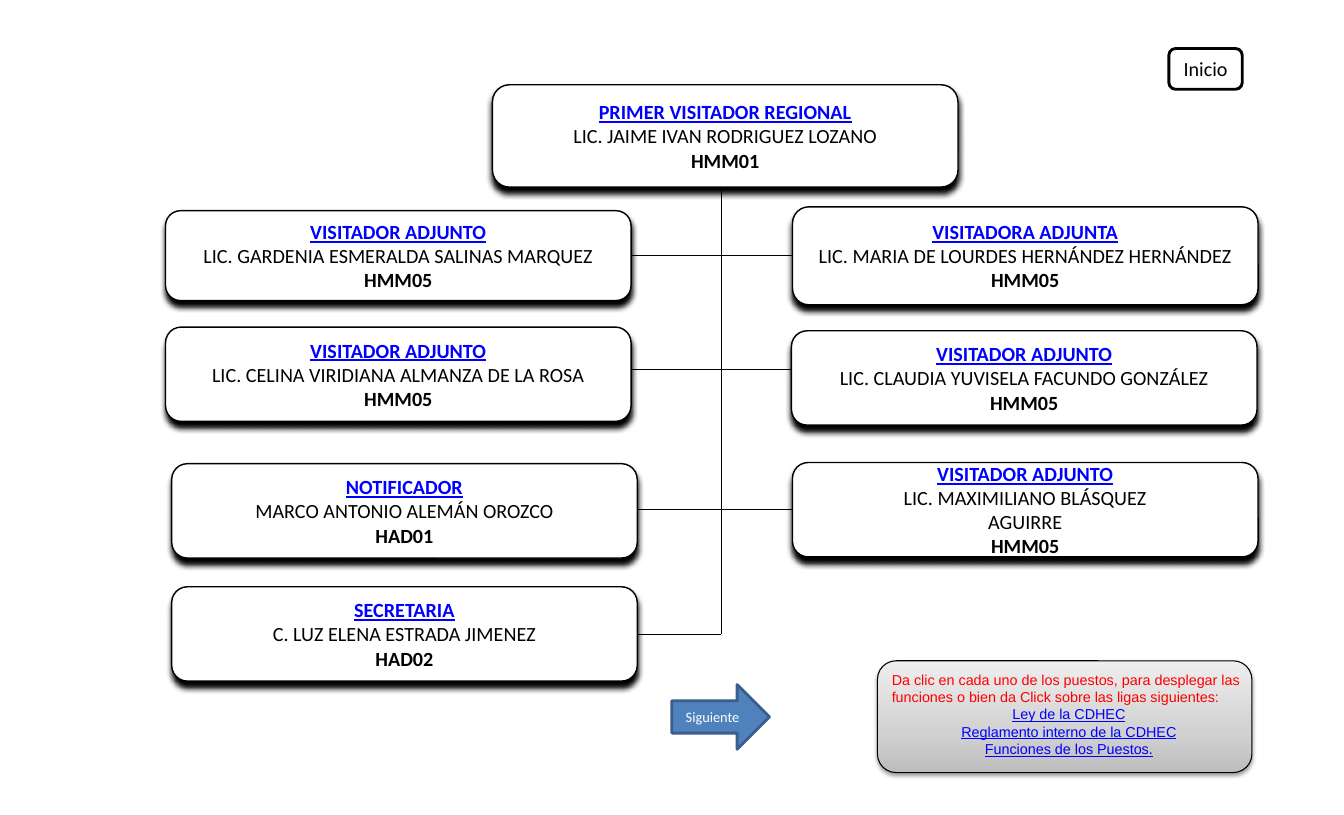
from copy import deepcopy
from lxml.etree import SubElement as Sub
from pptx import Presentation
from pptx.dml.color import RGBColor as Rgb
from pptx.enum.shapes import MSO_CONNECTOR as Conn, MSO_SHAPE as Kind
from pptx.enum.text import MSO_ANCHOR as Anchor, MSO_AUTO_SIZE as Fit, PP_ALIGN as Align
from pptx.oxml.ns import qn
from pptx.util import Pt

COLORS = {"ink": "000000", "paper": "FFFFFF", "link": "0000FF", "note": "FF0000",
          "arrow": "4F81BD", "rim": "3A5F8C",
          "low": "BDBDBD", "mid": "D1D1D1", "high": "EEEEEE"}
WIDE = 324
TRUNK = 501.8
HEAD = (342.7, 59, 71.3, ["PRIMER VISITADOR REGIONAL",
                          "LIC. JAIME IVAN RODRIGUEZ LOZANO", "HMM01"])
# Each row: height of its branch, then left and right posts (left, top, height, lines)
ROWS = [
    (177.8,
     (115.2, 146.7, 62.6, ["VISITADOR ADJUNTO",
                           "LIC. GARDENIA ESMERALDA SALINAS MARQUEZ", "HMM05"]),
     (551.5, 144, 68.2, ["VISITADORA ADJUNTA",
                         "LIC. MARIA DE LOURDES HERNÁNDEZ HERNÁNDEZ", "HMM05"])),
    (257,
     (115.2, 227.7, 65.7, ["VISITADOR ADJUNTO",
                           "LIC. CELINA VIRIDIANA ALMANZA DE LA ROSA", "HMM05"]),
     (550.8, 230.3, 65.7, ["VISITADOR ADJUNTO",
                           "LIC. CLAUDIA YUVISELA FACUNDO GONZÁLEZ", "HMM05"])),
    (355,
     (119.5, 322.8, 65.7, ["NOTIFICADOR", "MARCO ANTONIO ALEMÁN OROZCO", "HAD01"]),
     (551.5, 322, 65.7, ["VISITADOR ADJUNTO", "LIC. MAXIMILIANO BLÁSQUEZ",
                         "AGUIRRE", "HMM05"])),
    (441.4,
     (119.5, 408.5, 65.7, ["SECRETARIA", "C. LUZ ELENA ESTRADA JIMENEZ", "HAD02"]),
     None),
]


def tint(name):
    return Rgb.from_string(COLORS[name])


def add_shape(slide, kind, box, fill, rim, width):
    shape = slide.shapes.add_shape(kind, *map(Pt, box))
    shape.shadow.inherit = False
    shape.fill.solid()
    shape.fill.fore_color.rgb = tint(fill)
    shape.line.color.rgb = tint(rim)
    shape.line.width = Pt(width)
    return shape


def cast(shape, blur, drop, alpha):
    """Give the shape a black shadow straight below it."""
    effects = shape._element.spPr.find(qn("a:effectLst"))
    shade = Sub(effects, qn("a:outerShdw"), blurRad=str(Pt(blur)), dist=str(Pt(drop)),
                dir="5400000", algn="ctr", rotWithShape="0")
    color = Sub(shade, qn("a:srgbClr"), val=COLORS["ink"])
    Sub(color, qn("a:alpha"), val=str(alpha * 1000))


def write(frame, lines, face, size, align=Align.CENTER):
    """Fill the frame with (text, color, bold, underline) lines."""
    for i, (text, color, bold, under) in enumerate(lines):
        para = frame.paragraphs[0] if i == 0 else frame.add_paragraph()
        para.text = text
        para.alignment = align
        font = para.font
        font.name, font.size = face, Pt(size)
        font.color.rgb = tint(color)
        font.bold, font.underline = bold, under


def add_line(slide, x1, y1, x2, y2):
    line = slide.shapes.add_connector(Conn.STRAIGHT, *map(Pt, (x1, y1, x2, y2)))
    line.line.color.rgb = tint("ink")
    line.line.width = Pt(0.75)
    Sub(line._element.spPr, qn("a:effectLst"))


def add_post(slide, left, top, high, lines):
    post = add_shape(slide, Kind.ROUNDED_RECTANGLE, (left, top, WIDE, high),
                     "paper", "ink", 1)
    cast(post, 4, 4, 100)
    frame = post.text_frame
    frame.word_wrap = False
    frame.vertical_anchor = Anchor.MIDDLE
    frame.margin_left = frame.margin_right = Pt(12.2)
    frame.margin_top = frame.margin_bottom = Pt(6.5)
    title, *names, code = lines
    write(frame, [(title, "link", True, True),
                  *((name, "ink", False, False) for name in names),
                  (code, "ink", True, False)], "Calibri", 14)


def add_chart(slide):
    """Lay out the trunk, its branches and the posts."""
    add_line(slide, TRUNK, HEAD[1] + HEAD[2], TRUNK, ROWS[-1][0])
    add_post(slide, *HEAD)
    for level, left, right in ROWS:
        add_line(slide, left[0] + WIDE, level, right[0] if right else TRUNK, level)
        add_post(slide, *left)
        if right:
            add_post(slide, *right)


def add_button(slide, kind, box, fill, rim, label, color, size):
    button = add_shape(slide, kind, box, fill, rim, 2)
    button.text_frame.vertical_anchor = Anchor.MIDDLE
    write(button.text_frame, [(label, color, False, False)], "Calibri", size)


def add_note(slide, left, top, wide, high):
    card = add_shape(slide, Kind.ROUNDED_RECTANGLE, (left, top, wide, high),
                     "paper", "ink", 0.75)
    cast(card, 3.1, 1.6, 38)
    card.fill.gradient()
    card.fill.gradient_angle = 90
    stops = card._element.spPr.find(".//" + qn("a:gsLst"))
    stops.append(deepcopy(stops[0]))
    shades = [(0, "low"), (0.35, "mid"), (1, "high")]
    for stop, (place, name) in zip(card.fill.gradient_stops, shades):
        stop.position = place
        stop.color.rgb = tint(name)

    text = slide.shapes.add_textbox(*map(Pt, (left + 2.9, top + 3.6, wide, 67.7)))
    frame = text.text_frame
    frame.word_wrap = True
    frame.auto_size = Fit.SHAPE_TO_FIT_TEXT
    links = ["Ley de la CDHEC", "Reglamento interno de la CDHEC",
             "Funciones de los Puestos."]
    write(frame, [("Da clic en cada uno de los puestos, para desplegar las funciones "
                   "o bien da Click sobre las ligas siguientes:", "note", False, False),
                  *((link, "link", False, True) for link in links)], "Arial", 10)
    frame.paragraphs[0].alignment = Align.LEFT


def main():
    deck = Presentation()
    deck.slide_width, deck.slide_height = Pt(935.28), Pt(567.36)
    slide = deck.slides.add_slide(deck.slide_layouts[6])
    add_chart(slide)
    add_button(slide, Kind.ROUNDED_RECTANGLE, (813.4, 33.8, 51.1, 28.4),
               "paper", "ink", "Inicio", "ink", 14)
    add_button(slide, Kind.RIGHT_ARROW, (467.5, 476.6, 68, 45),
               "arrow", "rim", "Siguiente", "paper", 10)
    add_note(slide, 610.6, 460, 260.6, 77.8)
    deck.save("out.pptx")


if __name__ == "__main__":
    main()
